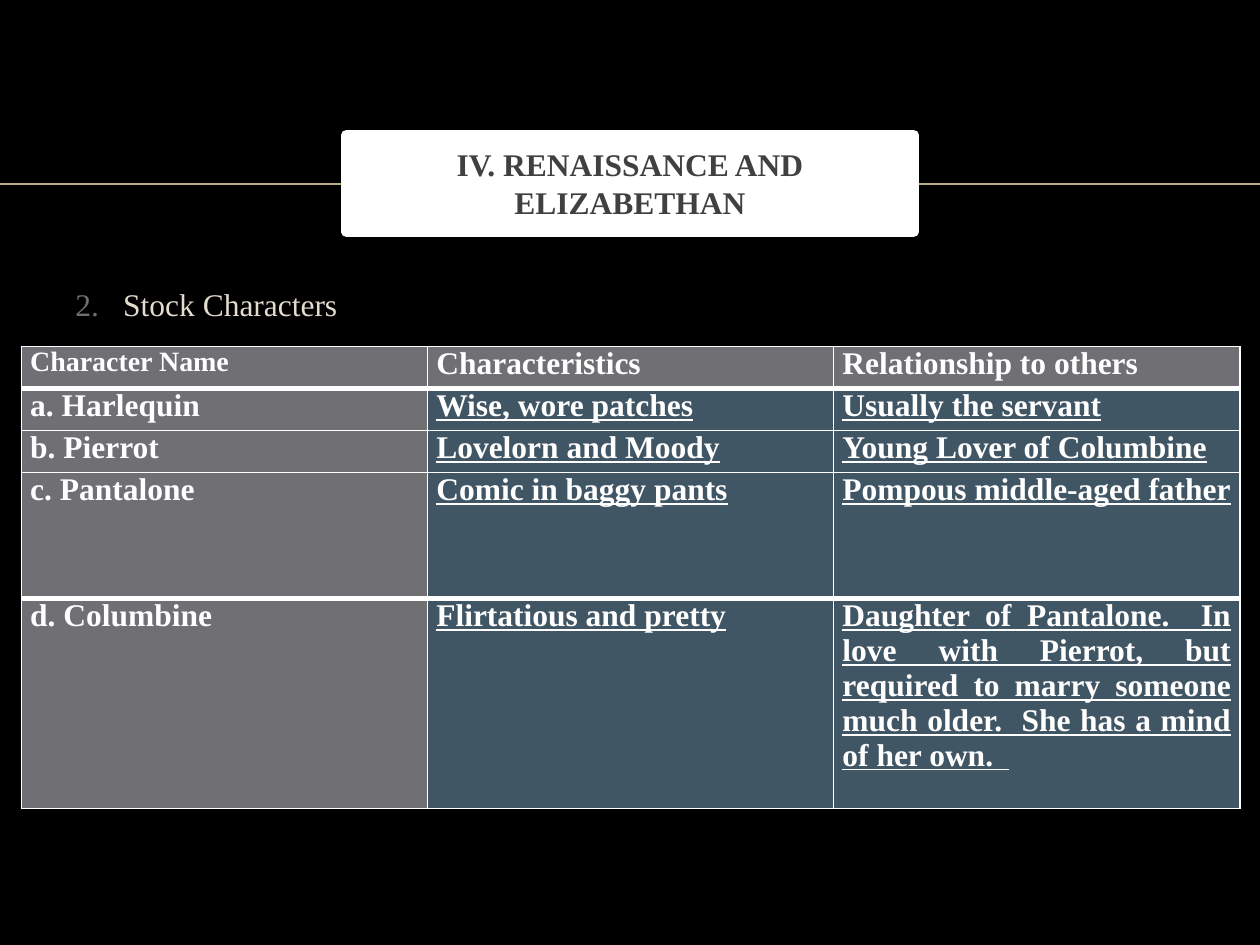
from lxml import etree
from pptx import Presentation, util as u
from pptx.dml.color import RGBColor
from pptx.enum import shapes, text
from pptx.oxml import ns

COLORS = {
    "background": "000000", "white": "FFFFFF", "rule": "BBAA8A", "title": "404040",
    "body": "E3DCCF", "gray": "6F6F74", "blue": "415665",
}
FONT = "Times New Roman"
ROWS = [
    ["Character Name", "Characteristics", "Relationship to others"],
    ["a. Harlequin", "Wise, wore patches", "Usually the servant"],
    ["b. Pierrot", "Lovelorn and Moody", "Young Lover of Columbine"],
    ["c. Pantalone", "Comic in baggy pants", "Pompous middle-aged father"],
    ["d. Columbine", "Flirtatious and pretty",
     "Daughter of Pantalone.  In love with Pierrot, but required to marry someone "
     "much older.  She has a mind of her own.  "],
]
ROW_HEIGHTS = [1 / 3, 1 / 3, 1 / 3, 1, 5 / 3]
THICK_RULES = {1, 4}


def color(name):
    """Return the named colour."""
    return RGBColor.from_string(COLORS[name])


def add_element(parent, tag, **attributes):
    """Append a DrawingML element and return it."""
    return etree.SubElement(parent, ns.qn(tag), attributes)


def write_text(frame, words, size=18, ink="white", bold=False, underline=False,
               align=text.PP_ALIGN.LEFT, before=0, spacing=None):
    """Write one formatted paragraph into a text frame and return it."""
    frame.word_wrap = True
    paragraph = frame.paragraphs[0]
    paragraph.alignment = align
    paragraph.line_spacing = spacing
    paragraph.space_before = u.Pt(before)
    run = paragraph.add_run()
    run.text = words
    run.font.name = FONT
    run.font.size = u.Pt(size)
    run.font.bold = bold
    run.font.underline = underline
    run.font.color.rgb = color(ink)
    return paragraph


def add_rule(slide, left, top, width):
    """Draw the horizontal rule that runs behind the title."""
    rule = slide.shapes.add_connector(
        shapes.MSO_CONNECTOR.STRAIGHT, left, top, left + width, top)
    rule.line.color.rgb = color("rule")
    rule.line.width = u.Pt(1)
    add_element(rule._element.spPr, "a:effectLst")


def add_title(slide, left, top, width, height):
    """Place the white title box."""
    box = slide.shapes.add_shape(shapes.MSO_SHAPE.RECTANGLE, left, top, width, height)
    box.shadow.inherit = False
    box.fill.solid()
    box.fill.fore_color.rgb = color("white")
    box.line.color.rgb = color("white")
    box.line.width = u.Pt(6)
    box.text_frame.vertical_anchor = text.MSO_ANCHOR.MIDDLE
    write_text(box.text_frame, "IV. RENAISSANCE AND ELIZABETHAN", ink="title",
               bold=True, align=text.PP_ALIGN.CENTER, before=4)


def add_heading(slide, left, top, width, height):
    """Place the numbered heading above the table."""
    box = slide.shapes.add_textbox(left, top, width, height)
    paragraph = write_text(box.text_frame, "Stock Characters", ink="body", before=6)
    properties = paragraph._p.get_or_add_pPr()
    indent = u.Inches(0.38)
    properties.set("marL", str(indent))
    properties.set("indent", str(-indent))
    bullet_color = add_element(properties, "a:buClr")
    add_element(bullet_color, "a:srgbClr", val=COLORS["gray"])
    add_element(properties, "a:buFont", typeface=FONT)
    add_element(properties, "a:buAutoNum", type="arabicPeriod", startAt="2")


def set_borders(cell, top, bottom):
    """Give a cell white borders, with top and bottom widths in points."""
    properties = cell._tc.get_or_add_tcPr()
    widths = {"L": 1, "R": 1, "T": top, "B": bottom}
    for index, (side, width) in enumerate(widths.items()):
        line = add_element(properties, f"a:ln{side}", w=str(u.Pt(width)))
        fill = add_element(line, "a:solidFill")
        add_element(fill, "a:srgbClr", val=COLORS["white"])
        properties.insert(index, line)


def add_characters(slide, left, top, width, height):
    """Place the table of stock characters."""
    table = slide.shapes.add_table(
        len(ROWS), len(ROWS[0]), left, top, width, height).table
    for column in table.columns:
        column.width = width // len(ROWS[0])
    for row, words in enumerate(ROWS):
        table.rows[row].height = u.Inches(ROW_HEIGHTS[row])
        for column, entry in enumerate(words):
            cell = table.cell(row, column)
            is_detail = row > 0 and column > 0
            cell.margin_left = cell.margin_right = u.Inches(0.07)
            cell.margin_top = cell.margin_bottom = 0
            cell.fill.solid()
            cell.fill.fore_color.rgb = color("blue" if is_detail else "gray")
            set_borders(cell, *(3 if edge in THICK_RULES else 1 for edge in (row, row + 1)))
            write_text(cell.text_frame, entry, size=16 if row == column == 0 else 18,
                       bold=True, underline=is_detail, align=text.PP_ALIGN.JUSTIFY)


def main():
    """Build and save the slide."""
    presentation = Presentation()
    presentation.slide_width = u.Inches(10)
    presentation.slide_height = u.Inches(7.5)
    slide = presentation.slides.add_slide(presentation.slide_layouts[6])
    slide.background.fill.solid()
    slide.background.fill.fore_color.rgb = color("background")
    add_rule(slide, 0, u.Inches(1.46), presentation.slide_width)
    add_heading(slide, u.Inches(0.5), u.Inches(2.21), u.Inches(9), u.Inches(0.5))
    add_title(slide, u.Inches(2.75), u.Inches(1.07), u.Inches(4.5), u.Inches(0.77))
    add_characters(slide, u.Inches(0.17), u.Inches(2.75), u.Inches(9.67), u.Inches(3.67))
    presentation.save("out.pptx")


if __name__ == "__main__":
    main()
